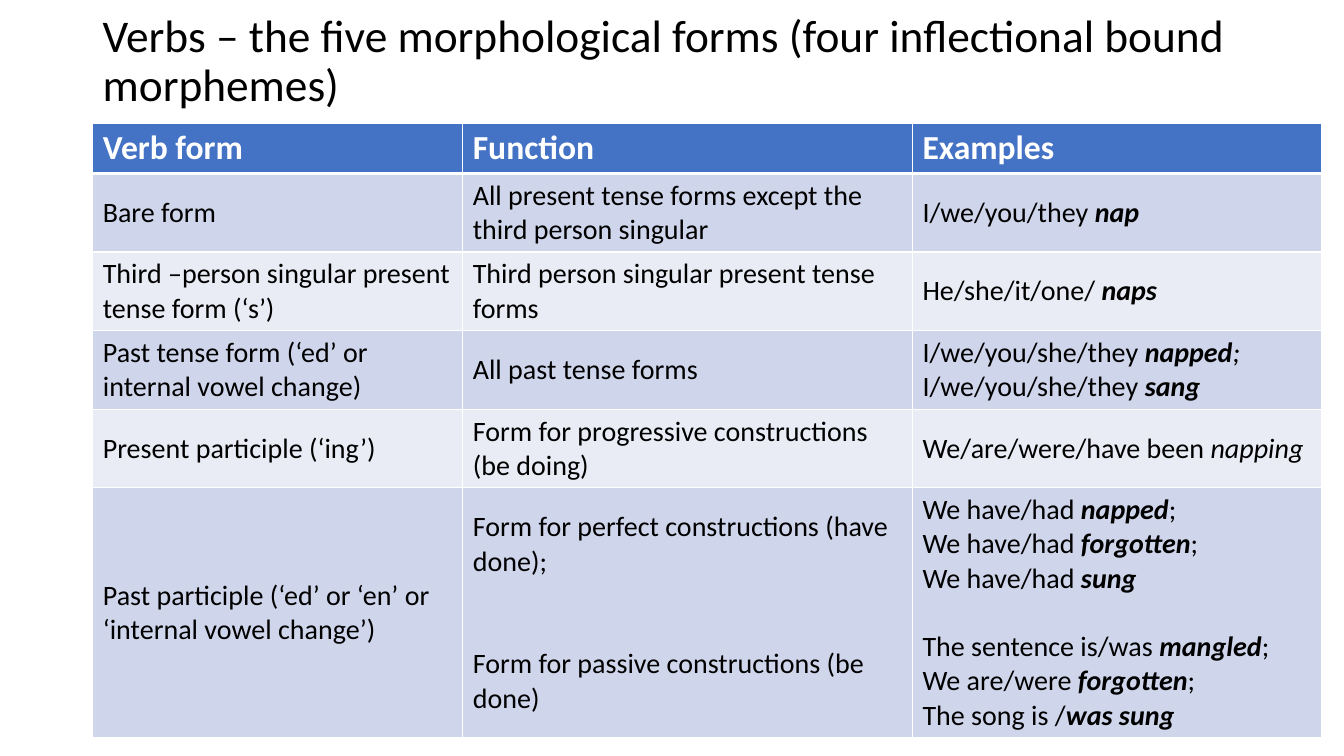
import lxml.etree
import pptx
import pptx.dml.color
import pptx.enum.text
import pptx.oxml.ns
import pptx.util

Inches = pptx.util.Inches
RGBColor = pptx.dml.color.RGBColor
MIDDLE = pptx.enum.text.MSO_ANCHOR.MIDDLE

BLACK = RGBColor(0x00, 0x00, 0x00)
WHITE = RGBColor(0xFF, 0xFF, 0xFF)
HEADER_BLUE = RGBColor(0x44, 0x72, 0xC4)
BANDS = (RGBColor(0xCF, 0xD5, 0xEA), RGBColor(0xE9, 0xEB, 0xF5))
FONT = "Calibri"
BODY_SIZE = 20
BLANK_LINE = 24.4

TITLE = "Verbs – the five morphological forms (four inflectional bound morphemes)"
HEADINGS = ("Verb form", "Function", "Examples")
# Asterisks enclose bold italic words; underscores enclose italic words.
VERB_FORMS = (
    ("Bare form",
     "All present tense forms except the third person singular",
     "I/we/you/they *nap*"),
    ("Third –person singular present tense form (‘s’)",
     "Third person singular present tense forms",
     "He/she/it/one/ *naps*"),
    ("Past tense form (‘ed’ or internal vowel change)",
     "All past tense forms",
     "I/we/you/she/they *napped*_;_\nI/we/you/she/they *sang*"),
    ("Present participle (‘ing’)",
     "Form for progressive constructions (be doing)",
     "We/are/were/have been _napping_"),
    ("Past participle (‘ed’ or ‘en’ or ‘internal vowel change’)",
     "Form for perfect constructions (have done);\n"
     "Form for passive constructions (be done)",
     "We have/had *napped*;\nWe have/had *forgotten*;\nWe have/had *sung*\n"
     "The sentence is/was *mangled*;\nWe are/were *forgotten*;\n"
     "The song is /*was sung*"),
)
PASSIVE_GAPS = {1: {1: 2 * BLANK_LINE}, 2: {3: BLANK_LINE}}
COLUMN_WIDTHS = (3.67, 4.46, 4.06)
ROW_HEIGHTS = (0.49, 0.78, 0.78, 0.78, 0.78, 2.48)


def write_text(frame, text, size=BODY_SIZE, color=BLACK, bold=False,
               line_spacing=None, gaps=None):
    frame.word_wrap = True
    for index, line in enumerate(text.split("\n")):
        paragraph = frame.paragraphs[0] if index == 0 else frame.add_paragraph()
        paragraph.line_spacing = line_spacing
        if gaps and index in gaps:
            paragraph.space_before = pptx.util.Pt(gaps[index])
        for strong_index, part in enumerate(line.split("*")):
            strong = strong_index % 2 == 1
            for italic_index, words in enumerate(part.split("_")):
                if not words:
                    continue
                run = paragraph.add_run()
                run.text = words
                run.font.name = FONT
                run.font.size = pptx.util.Pt(size)
                run.font.color.rgb = color
                run.font.bold = bold or strong
                run.font.italic = strong or italic_index % 2 == 1


def add_border(cell, side, width):
    properties = cell._tc.get_or_add_tcPr()
    qn = pptx.oxml.ns.qn
    line = lxml.etree.SubElement(properties, qn(f"a:ln{side}"),
                                 w=str(pptx.util.Pt(width)))
    fill = lxml.etree.SubElement(line, qn("a:solidFill"))
    lxml.etree.SubElement(fill, qn("a:srgbClr"), val=str(WHITE))


def style_cell(cell, fill, top, bottom):
    for side, width in (("L", 1), ("R", 1), ("T", top), ("B", bottom)):
        add_border(cell, side, width)
    cell.fill.solid()
    cell.fill.fore_color.rgb = fill
    cell.vertical_anchor = MIDDLE


def add_title(slide, left, top, width, height):
    title = slide.shapes.add_textbox(*map(Inches, (left, top, width, height)))
    title.text_frame.vertical_anchor = MIDDLE
    write_text(title.text_frame, TITLE, size=32.4, line_spacing=0.9)


def add_verb_table(slide, left, top):
    box = (left, top, sum(COLUMN_WIDTHS), sum(ROW_HEIGHTS))
    table = slide.shapes.add_table(len(ROW_HEIGHTS), len(COLUMN_WIDTHS),
                                   *map(Inches, box)).table
    table.horz_banding = False
    for column, width in zip(table.columns, COLUMN_WIDTHS):
        column.width = Inches(width)
    for row, height in zip(table.rows, ROW_HEIGHTS):
        row.height = Inches(height)
    for column, heading in enumerate(HEADINGS):
        cell = table.cell(0, column)
        style_cell(cell, HEADER_BLUE, top=1, bottom=3)
        write_text(cell.text_frame, heading, size=24, color=WHITE, bold=True)
    for row, verb_form in enumerate(VERB_FORMS, start=1):
        gaps = PASSIVE_GAPS if row == len(VERB_FORMS) else {}
        for column, text in enumerate(verb_form):
            cell = table.cell(row, column)
            style_cell(cell, BANDS[(row - 1) % 2],
                       top=3 if row == 1 else 1, bottom=1)
            write_text(cell.text_frame, text, gaps=gaps.get(column))


def main():
    presentation = pptx.Presentation()
    presentation.slide_width = Inches(13.33)
    presentation.slide_height = Inches(7.5)
    slide = presentation.slides.add_slide(presentation.slide_layouts[6])
    add_title(slide, 0.92, 0.14, 11.5, 0.96)
    add_verb_table(slide, 0.92, 1.22)
    presentation.save("out.pptx")


if __name__ == "__main__":
    main()
